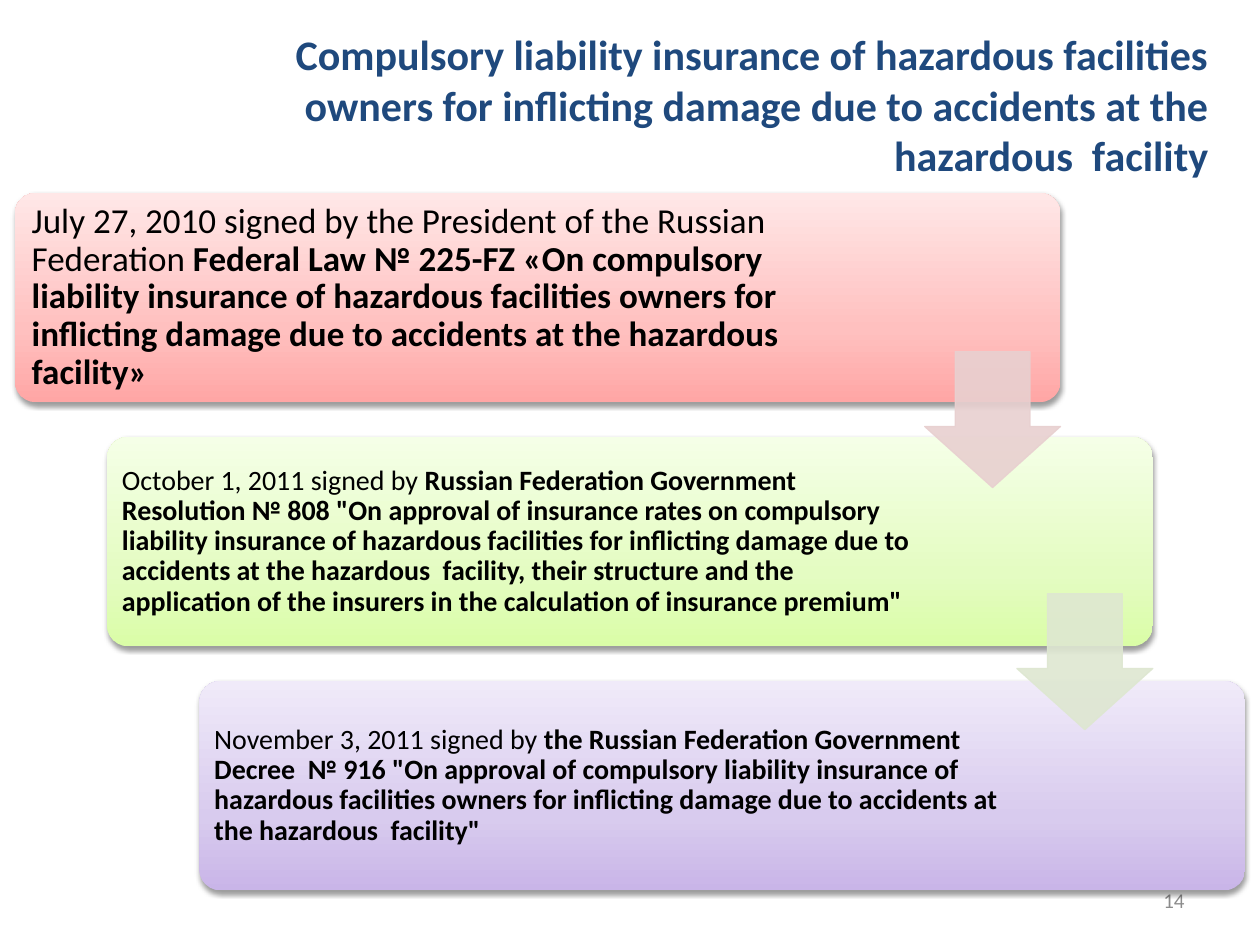
from lxml import etree
from pptx import Presentation
from pptx.dml.color import RGBColor
from pptx.enum.shapes import MSO_SHAPE
from pptx.enum.text import MSO_ANCHOR, MSO_AUTO_SIZE, PP_ALIGN
from pptx.oxml import parse_xml
from pptx.oxml.ns import nsdecls, qn
from pptx.util import Cm, Pt

ROUND_RECT, DOWN_ARROW = MSO_SHAPE.ROUNDED_RECTANGLE, MSO_SHAPE.DOWN_ARROW
MIDDLE, RIGHT, LEFT = MSO_ANCHOR.MIDDLE, PP_ALIGN.RIGHT, PP_ALIGN.LEFT

THEME = {
    "font": "Calibri",
    "title": {"size": Pt(24), "color": "1F497D", "bold": True},
    "number": {"size": Pt(12), "color": "8C8C8C", "bold": False},
    "text": "000000",
    "lead_size": Pt(20),
    "body_size": Pt(16),
    "cards": [("FFA6A5", "FFC0BF", "FFE7E7"),
              ("DAFDA7", "E4FCC2", "F5FFE7"),
              ("C9B5E8", "D8CBEE", "F0EAF9")],
    "arrows": ["E8D0D0", "DEE7D1"],
}


def add_run(p, text, size, color, bold):
    r = p.add_run()
    r.text = text
    for name, value in {"name": THEME["font"], "size": size, "bold": bold}.items():
        setattr(r.font, name, value)
    r.font.color.rgb = RGBColor.from_string(color)


def set_frame(tf, margin_x, margin_y, align):
    frame = {"word_wrap": True, "auto_size": MSO_AUTO_SIZE.NONE, "vertical_anchor": MIDDLE,
             "margin_left": margin_x, "margin_right": margin_x,
             "margin_top": margin_y, "margin_bottom": margin_y}
    for name, value in frame.items():
        setattr(tf, name, value)
    tf.paragraphs[0].alignment = align
    return tf.paragraphs[0]


prs = Presentation()
prs.slide_width, prs.slide_height = Cm(25.4), Cm(19.05)
s = prs.slides.add_slide(prs.slide_layouts[5])

# Title
title = s.shapes.title
title.left, title.top, title.width, title.height = Cm(3.71), Cm(0.71), Cm(20.9), Cm(2.79)
p = set_frame(title.text_frame, Cm(0.25), Cm(0.13), RIGHT)
add_run(p, "Compulsory liability insurance of hazardous facilities owners for inflicting "
           "damage due to accidents at the hazardous  facility", **THEME["title"])

# Slide number
number = s.shapes.add_textbox(Cm(18.2), Cm(17.65), Cm(5.93), Cm(1.01))
p = set_frame(number.text_frame, Cm(0.25), Cm(0.13), RIGHT)
add_run(p, "14", **THEME["number"])

# Staircase of cards: lead-in, bold text, type size, text width, margin
cards = [
    ("July 27, 2010 signed by the President of the Russian Federation ",
     "Federal Law № 225-FZ «On compulsory liability insurance of hazardous facilities "
     "owners for inflicting damage due to accidents at the hazardous  facility»",
     THEME["lead_size"], Cm(16.54), Cm(0.21)),
    ("October 1, 2011 signed by ",
     "Russian Federation Government Resolution № 808 \"On approval of insurance rates on "
     "compulsory liability insurance of hazardous facilities for inflicting damage due to "
     "accidents at the hazardous  facility, their structure and the application of the "
     "insurers in the calculation of insurance premium\"",
     THEME["body_size"], Cm(16.23), Cm(0.17)),
    ("November 3, 2011 signed by ",
     "the Russian Federation Government Decree  № 916 \"On approval of compulsory liability "
     "insurance of hazardous facilities owners for inflicting damage due to accidents at "
     "the hazardous  facility\"",
     THEME["body_size"], Cm(16.23), Cm(0.17)),
]
card_left, card_top, card_w, card_h = Cm(0.3), Cm(3.89), Cm(21.08), Cm(4.22)
step_x, step_y, inset = Cm(1.86), Cm(4.92), Cm(0.13)

for i, (lead, body, size, text_w, margin) in enumerate(cards):
    left, top = card_left + i * step_x, card_top + i * step_y
    card = s.shapes.add_shape(ROUND_RECT, left, top, card_w, card_h)
    card.adjustments[0] = 0.1
    card.line.fill.background()

    # Three-stop gradient, dark at the bottom, and a soft shadow below
    card.fill.background()
    stops = "".join(f'<a:gs pos="{pos}"><a:srgbClr val="{color}"/></a:gs>'
                    for pos, color in zip((0, 35000, 100000), THEME["cards"][i]))
    sp_pr = card.element.spPr
    sp_pr.replace(sp_pr.find(qn("a:noFill")), parse_xml(
        f'<a:gradFill {nsdecls("a")} rotWithShape="1"><a:gsLst>{stops}</a:gsLst>'
        '<a:lin ang="16200000" scaled="0"/></a:gradFill>'))
    sp_pr.append(parse_xml(
        f'<a:effectLst {nsdecls("a")}><a:outerShdw blurRad="40000" dist="20000" dir="5400000" '
        'rotWithShape="0"><a:srgbClr val="000000"><a:alpha val="38000"/></a:srgbClr>'
        '</a:outerShdw></a:effectLst>'))

    box = s.shapes.add_textbox(left + inset, top + inset, text_w, card_h - 2 * inset)
    p = set_frame(box.text_frame, margin, margin, LEFT)
    p.line_spacing = 0.9
    add_run(p, lead, size, THEME["text"], False)
    add_run(p, body, size, THEME["text"], True)

# Arrows, flush with the right edge of the card they leave
arrow_size, arrow_top, arrow_step = Cm(2.74), Cm(7.09), Cm(4.88)
for i, color in enumerate(THEME["arrows"]):
    left = card_left + i * step_x + card_w - arrow_size
    arrow = s.shapes.add_shape(DOWN_ARROW, left, arrow_top + i * arrow_step,
                               arrow_size, arrow_size)
    arrow.adjustments[0], arrow.adjustments[1] = 0.55, 0.45
    arrow.shadow.inherit = False
    arrow.fill.solid()
    arrow.line.width = Pt(0.75)
    for paint in (arrow.fill.fore_color, arrow.line.color):
        paint.rgb = RGBColor.from_string(color)
    for clr in arrow.element.spPr.iter(qn("a:srgbClr")):
        etree.SubElement(clr, qn("a:alpha"), val="90000")

prs.save("out.pptx")
